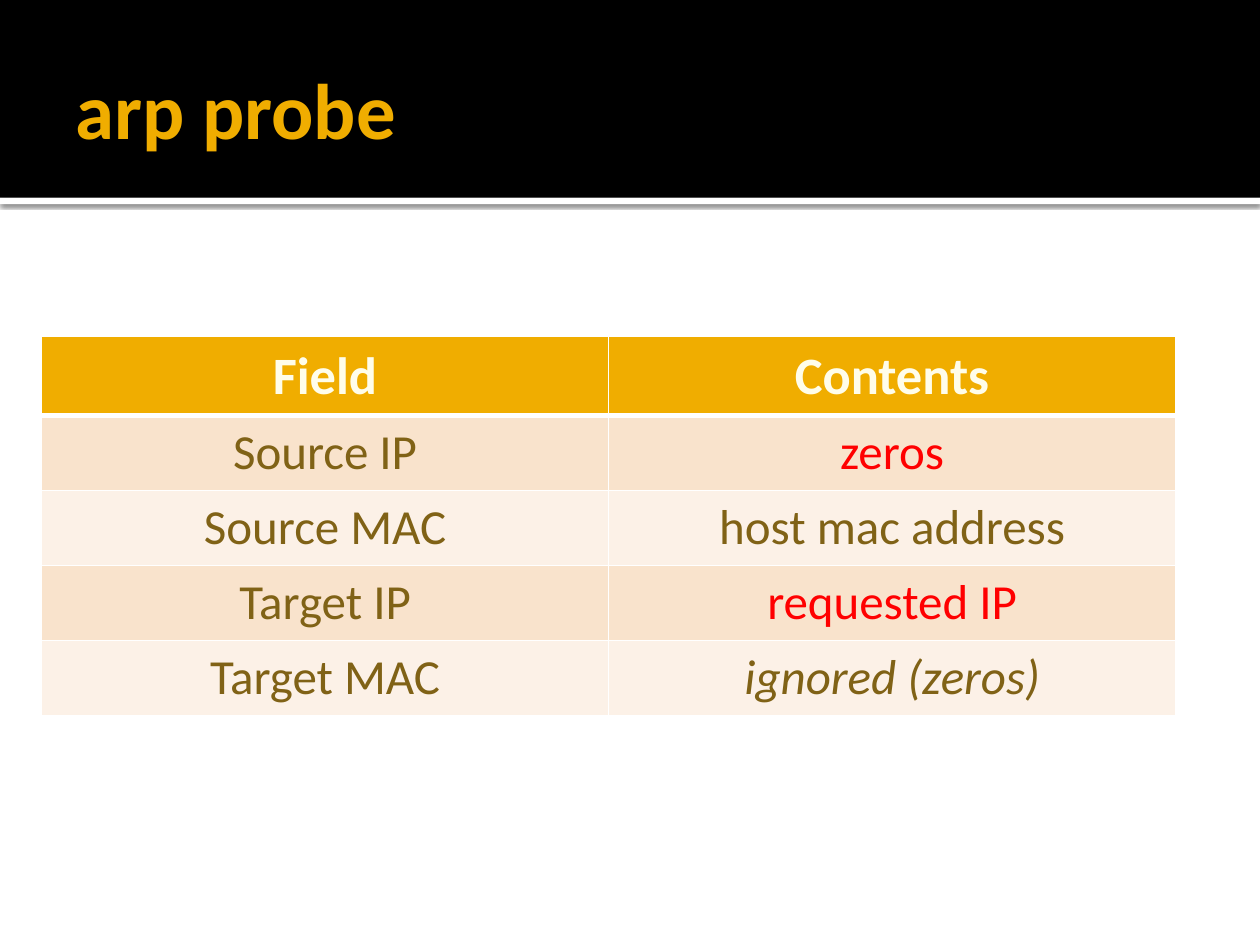
from lxml.etree import SubElement
from pptx import Presentation
from pptx.dml.color import RGBColor
from pptx.enum.shapes import MSO_SHAPE
from pptx.enum.text import MSO_ANCHOR, PP_ALIGN
from pptx.oxml.ns import qn
from pptx.util import Inches, Pt

TITLE = "arp probe"
HEADER = ("Field", "Contents")
ROWS = [
    ("Source IP", "zeros"),
    ("Source MAC", "host mac address"),
    ("Target IP", "requested IP"),
    ("Target MAC", "ignored (zeros)"),
]
HIGHLIGHTED = {"zeros", "requested IP"}
ITALIC = {"ignored (zeros)"}

THEME = {
    "font": "Calibri",
    "title_size": 45, "header_size": 30, "body_size": 28,
    "accent": "F0AD00", "header_text": "FFFDEA",
    "body_text": "806216", "highlight": "FF0000",
    "bands": ("F9E3CC", "FCF1E7"),
    "banner": "000000", "rule": "FFFFFF", "shadow": "000000",
    "thin": 1, "thick": 3,
}
BANNER_HEIGHT, RULE_HEIGHT = 1.57, 0.05
HEADER_HEIGHT, ROW_HEIGHT = 0.61, 0.58
COLUMN_WIDTH, CELL_INSET = 4.5, 0.06


def color(key):
    return RGBColor.from_string(THEME.get(key, key))


def add_strip(slide, top, height, fill):
    strip = slide.shapes.add_shape(
        MSO_SHAPE.RECTANGLE, 0, Inches(top), Inches(10), Inches(height))
    strip.shadow.inherit = False
    strip.fill.solid()
    strip.fill.fore_color.rgb = color(fill)
    strip.line.fill.background()
    return strip


def cast_shadow(strip):
    effects = strip.element.spPr.find(qn("a:effectLst"))
    shadow = SubElement(effects, qn("a:outerShdw"), blurRad=str(Pt(2.5)),
                        dist=str(Pt(0.8)), dir="5400000", algn="t",
                        rotWithShape="0")
    tint = SubElement(shadow, qn("a:srgbClr"), val=THEME["shadow"])
    SubElement(tint, qn("a:alpha"), val="60000")


def add_run(paragraph, words, size, ink, bold=False, italic=False):
    run = paragraph.add_run()
    run.text = words
    run.font.name = THEME["font"]
    run.font.size = Pt(THEME[size])
    run.font.bold = bold
    run.font.italic = italic
    run.font.color.rgb = color(ink)


def set_borders(cell, row):
    widths = {"L": "thin", "R": "thin",
              "T": "thick" if row == 1 else "thin",
              "B": "thick" if row == 0 else "thin"}
    properties = cell._tc.get_or_add_tcPr()
    for side, weight in widths.items():
        border = SubElement(properties, qn(f"a:ln{side}"),
                            w=str(Pt(THEME[weight])))
        solid = SubElement(border, qn("a:solidFill"))
        SubElement(solid, qn("a:srgbClr"), val=THEME["rule"])


def fill_cell(cell, row, words):
    set_borders(cell, row)
    cell.fill.solid()
    cell.vertical_anchor = MSO_ANCHOR.MIDDLE
    cell.margin_left = cell.margin_right = Inches(CELL_INSET)
    cell.margin_top = cell.margin_bottom = Inches(CELL_INSET)
    paragraph = cell.text_frame.paragraphs[0]
    paragraph.alignment = PP_ALIGN.CENTER
    if row == 0:
        cell.fill.fore_color.rgb = color("accent")
        add_run(paragraph, words, "header_size", "header_text", bold=True)
    else:
        cell.fill.fore_color.rgb = color(THEME["bands"][(row - 1) % 2])
        ink = "highlight" if words in HIGHLIGHTED else "body_text"
        add_run(paragraph, words, "body_size", ink, italic=words in ITALIC)


def place_title(slide):
    title = slide.shapes.title
    title.element.getparent().append(title.element)
    title.left, title.top = Inches(0.5), Inches(0.17)
    title.width, title.height = Inches(9), Inches(1.37)
    frame = title.text_frame
    frame.word_wrap = True
    frame.vertical_anchor = MSO_ANCHOR.MIDDLE
    frame.margin_left = Inches(0.1)
    frame.margin_right = frame.margin_top = frame.margin_bottom = Inches(0.05)
    frame.paragraphs[0].alignment = PP_ALIGN.LEFT
    add_run(frame.paragraphs[0], TITLE, "title_size", "accent", bold=True)


def place_fields(slide):
    lines = [HEADER, *ROWS]
    heights = [HEADER_HEIGHT] + [ROW_HEIGHT] * len(ROWS)
    fields = slide.shapes.add_table(
        len(lines), len(HEADER), Inches(0.33), Inches(2.67),
        Inches(COLUMN_WIDTH * len(HEADER)), Inches(sum(heights))).table
    for column in fields.columns:
        column.width = Inches(COLUMN_WIDTH)
    for row, (line, height) in enumerate(zip(lines, heights)):
        fields.rows[row].height = Inches(height)
        for column, words in enumerate(line):
            fill_cell(fields.cell(row, column), row, words)


def main():
    deck = Presentation()
    deck.slide_width, deck.slide_height = Inches(10), Inches(7.5)
    slide = deck.slides.add_slide(deck.slide_layouts[5])
    cast_shadow(add_strip(slide, BANNER_HEIGHT, RULE_HEIGHT, "rule"))
    add_strip(slide, 0, BANNER_HEIGHT, "banner")
    place_title(slide)
    place_fields(slide)
    deck.save("out.pptx")


if __name__ == "__main__":
    main()
